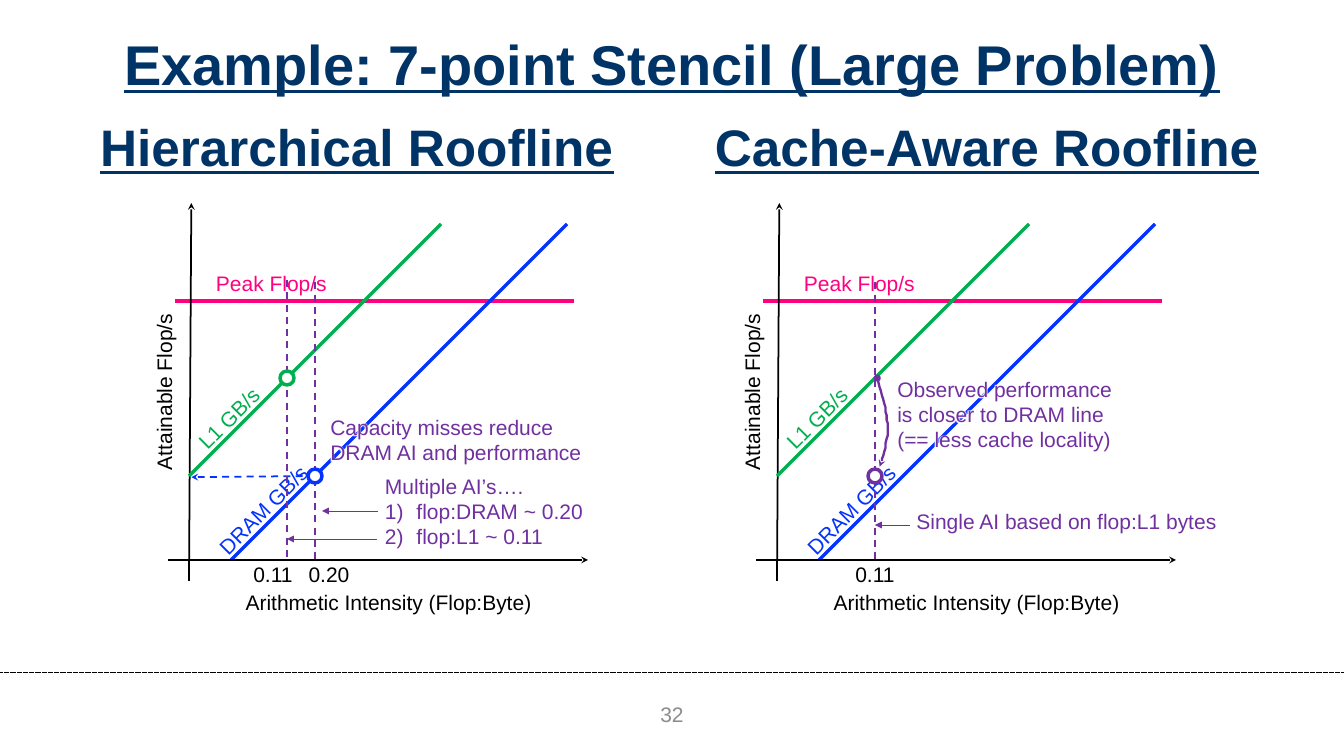
"""Build the slide comparing two roofline models of a large stencil problem."""
import dataclasses

import lxml.etree
import pptx
import pptx.dml.color
import pptx.enum.dml
import pptx.enum.shapes
import pptx.enum.text
import pptx.oxml.ns
import pptx.util

Pt = pptx.util.Pt
qn = pptx.oxml.ns.qn
RGB = pptx.dml.color.RGBColor.from_string
Sub = lxml.etree.SubElement
Align = pptx.enum.text.PP_ALIGN
Anchor = pptx.enum.text.MSO_ANCHOR
Fit = pptx.enum.text.MSO_AUTO_SIZE
Dash = pptx.enum.dml.MSO_LINE
Kind = pptx.enum.shapes


@dataclasses.dataclass
class Theme:
    font: str = "Arial"
    navy: str = "003366"
    gray: str = "8C8C8C"
    black: str = "000000"
    white: str = "FFFFFF"
    pink: str = "FF0080"
    blue: str = "0432FF"
    green: str = "00B050"
    plum: str = "7030A0"
    title: int = 48
    head: int = 44
    body: int = 18


look = Theme()
deck = pptx.Presentation()
deck.slide_width, deck.slide_height = Pt(1152), Pt(648)
slide = deck.slides.add_slide(deck.slide_layouts[5])
shapes = slide.shapes


def write(text, box, color, size=look.body, shape=None, strong=False, center=True,
          middle=False, wrap=False, pad=(7.2, 3.6, 7.2, 3.6), turn=0, list_from=None,
          glow=False):
    shape = shape or shapes.add_textbox(0, 0, 0, 0)
    shape.left, shape.top, shape.width, shape.height = map(Pt, box)
    shape.rotation = turn
    frame = shape.text_frame
    frame.text = text
    frame.word_wrap = wrap
    frame.auto_size = Fit.NONE
    frame.vertical_anchor = Anchor.MIDDLE if middle else Anchor.TOP
    (frame.margin_left, frame.margin_top,
     frame.margin_right, frame.margin_bottom) = map(Pt, pad)
    for row, para in enumerate(frame.paragraphs):
        para.alignment = Align.CENTER if center else Align.LEFT
        if list_from is not None and row >= list_from:
            props = para._p.get_or_add_pPr()
            props.set("marL", str(Pt(27)))
            props.set("indent", str(Pt(-27)))
            Sub(props, qn("a:buFont"), typeface="+mj-lt")
            Sub(props, qn("a:buAutoNum"), type="arabicParenR")
        for run in para.runs:
            font = run.font
            font.size, font.bold, font.underline = Pt(size), strong, strong
            font.color.rgb = RGB(color)
            if glow:
                halo = Sub(Sub(run._r.get_or_add_rPr(), qn("a:effectLst")),
                           qn("a:glow"), rad=str(Pt(5)))
                Sub(halo, qn("a:srgbClr"), val=look.white)
            font.name = look.font


def draw(points, color, width, dash=None, head=None, tail=None):
    if len(points) == 2:
        ends = [Pt(n) for point in points for n in point]
        line = shapes.add_connector(Kind.MSO_CONNECTOR.STRAIGHT, *ends)
    else:
        pen = shapes.build_freeform(*points[0], scale=Pt(1))
        pen.add_line_segments(points[1:], close=False)
        line = pen.convert_to_shape()
        line.fill.background()
    line.line.color.rgb = RGB(color)
    line.line.width = Pt(width)
    if dash:
        line.line.dash_style = dash
    props = line._element.spPr
    for tag, tip in (("a:headEnd", head), ("a:tailEnd", tail)):
        if tip:
            Sub(props.find(qn("a:ln")), qn(tag), type=tip)
    Sub(props, qn("a:effectLst"))


draw([(0, 576), (1152, 576)], look.black, 0.5, Dash.ROUND_DOT)
draw([(270, 408), (164, 409)], look.blue, 1.5, Dash.DASH, tail="stealth")
write("Example: 7-point Stencil (Large Problem)", (0, 0, 1152, 108), look.navy,
      look.title, shape=shapes.title, strong=True, middle=True, wrap=True,
      pad=(10, 5, 10, 5))
write("32", (468, 594, 216, 36), look.gray, middle=True, wrap=True)

panels = (
    (0, "Hierarchical Roofline", 36, (("0.11", 216), ("0.20", 264))),
    (504, "Cache-Aware Roofline", 576, (("0.11", 732),)),
)
for x, name, left, ticks in panels:
    write(name, (left, 94, 540, 56), look.navy, look.head, strong=True, wrap=True,
          pad=(10, 5, 10, 0))
    draw([(x + 150, 258), (x + 492, 258)], look.pink, 3)
    write("Peak Flop/s", (x + 178, 228, 110, 29), look.pink, center=False)
    draw([(x + 198, 480), (x + 486, 192)], look.blue, 3)
    write("DRAM GB/s", (x + 168.5, 422.5, 114, 29), look.blue, turn=315)
    draw([(x + 144, 480), (x + 504, 480)], look.black, 1.5, tail="stealth")
    draw([(x + 162, 498), (x + 164, 174)], look.black, 1.5, tail="stealth")
    write("Attainable Flop/s", (x, 318, 288, 36), look.black, turn=270)
    for label, spot in ticks:
        write(label, (spot, 480, 36, 24), look.black, middle=True, pad=(0, 0, 0, 0))
    write("Arithmetic Intensity (Flop:Byte)", (x + 162, 504, 342, 24), look.black,
          middle=True, pad=(0, 0, 0, 0))
    draw([(x + 162, 408), (x + 378, 192)], look.green, 3)
    write("L1 GB/s", (x + 156, 344, 80, 29), look.green, turn=315)

for x, top, foot in ((750, 242, 482), (270, 242, 482), (246, 240, 480)):
    draw([(x, top), (x, foot)], look.plum, 1.5, Dash.DASH)
for start, end, y in ((780, 750, 450), (324, 276, 438), (323, 246, 462)):
    draw([(start, y), (end, y)], look.plum, 0.75, tail="triangle")

write("Single AI based on flop:L1 bytes", (785.5, 432, 216, 36), look.plum,
      center=False, pad=(0, 3.6, 7.2, 3.6))
write("Multiple AI’s….\nflop:DRAM ~ 0.20\nflop:L1 ~ 0.11", (330, 402, 216, 36),
      look.plum, center=False, pad=(0, 3.6, 7.2, 3.6), list_from=1)

for x, y, color in ((270, 408, look.blue), (246, 324, look.green), (750, 408, look.plum)):
    dot = shapes.add_shape(Kind.MSO_SHAPE.OVAL, Pt(x - 6), Pt(y - 6), Pt(12), Pt(12))
    dot.shadow.inherit = False
    dot.fill.solid()
    dot.fill.fore_color.rgb = RGB(look.white)
    dot.line.color.rgb = RGB(color)
    dot.line.width = Pt(3)

write("Capacity misses reduce\nDRAM AI and performance", (276, 354, 193, 45),
      look.plum, center=False, middle=True, glow=True)

bends = (
    ((751.5, 324.5), (756, 339), (760.5, 353.5), (761, 366)),
    ((761, 366), (761, 378), (754.5, 399.5), (754.5, 399.5)),
)
curve = [bends[0][0]]
for bend in bends:
    for step in range(1, 13):
        t = step / 12
        parts = ((1 - t) ** 3, 3 * t * (1 - t) ** 2, 3 * t * t * (1 - t), t ** 3)
        curve.append(tuple(sum(p * n for p, n in zip(parts, axis)) for axis in zip(*bend)))
draw(curve, look.plum, 2, head="oval", tail="stealth")
write("Observed performance\nis closer to DRAM line\n(== less cache locality)",
      (762, 304, 193, 102), look.plum, center=False, middle=True, glow=True)

deck.save("out.pptx")
